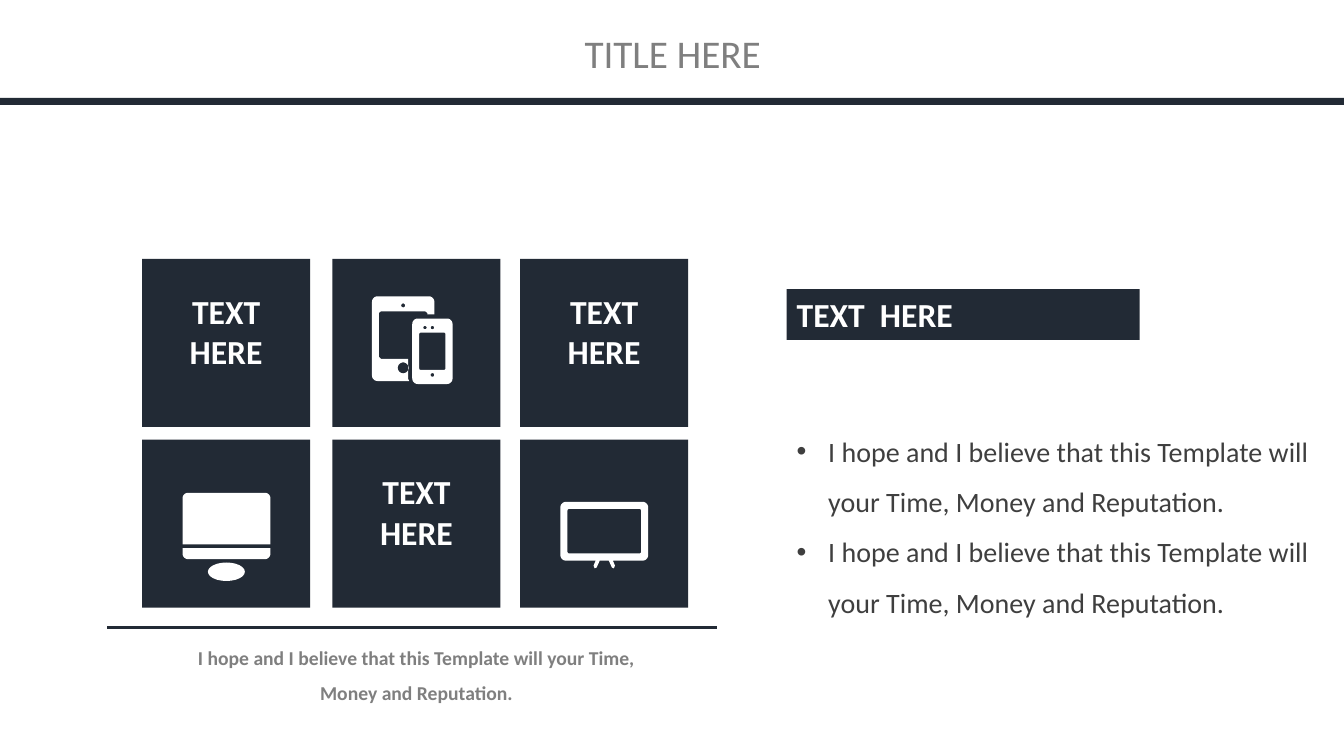
import math

from lxml import etree
from pptx import Presentation
from pptx.dml.color import RGBColor
from pptx.enum.shapes import MSO_CONNECTOR, MSO_SHAPE
from pptx.enum.text import MSO_ANCHOR, PP_ALIGN
from pptx.oxml.ns import qn
from pptx.util import Pt

RECTANGLE, OVAL = MSO_SHAPE.RECTANGLE, MSO_SHAPE.OVAL
STRAIGHT = MSO_CONNECTOR.STRAIGHT
TOP, MIDDLE = MSO_ANCHOR.TOP, MSO_ANCHOR.MIDDLE
LEFT, CENTER = PP_ALIGN.LEFT, PP_ALIGN.CENTER

NAVY = RGBColor(0x22, 0x2A, 0x35)
GRAY = RGBColor(0x7F, 0x7F, 0x7F)
DARK_GRAY = RGBColor(0x3F, 0x3F, 0x3F)
WHITE = RGBColor(0xFF, 0xFF, 0xFF)
FONT = "Calibri"
SENTENCE = "I hope and I believe that this Template will your Time, Money and Reputation."
ARC_POINTS = 7

presentation = Presentation()
presentation.slide_width = Pt(960)
presentation.slide_height = Pt(540)
slide = presentation.slides.add_slide(presentation.slide_layouts[5])
shapes = slide.shapes


def rounded_box(left, top, right, bottom, top_radius, bottom_radius):
    """Outline points by corner: top right, top left, bottom left, bottom right."""
    corners = (
        (right - top_radius, top + top_radius, top_radius),
        (left + top_radius, top + top_radius, top_radius),
        (left + bottom_radius, bottom - bottom_radius, bottom_radius),
        (right - bottom_radius, bottom - bottom_radius, bottom_radius),
    )
    points = []
    for quarter, (x, y, radius) in enumerate(corners):
        for step in range(ARC_POINTS):
            angle = (quarter + step / (ARC_POINTS - 1)) * math.pi / 2
            points.append((x + radius * math.cos(angle), y - radius * math.sin(angle)))
    return points


def style_shape(shape, color):
    shape.shadow.inherit = False
    shape.fill.solid()
    shape.fill.fore_color.rgb = color
    shape.line.fill.background()


# Header
header_bar = shapes.add_shape(RECTANGLE, Pt(0), Pt(70), Pt(960), Pt(5))
style_shape(header_bar, NAVY)

title = shapes.title
title.left, title.top, title.width, title.height = Pt(349), Pt(21), Pt(263), Pt(34)
frame = title.text_frame
frame.margin_left = frame.margin_right = frame.margin_top = frame.margin_bottom = 0
frame.vertical_anchor = TOP
frame.text = "TITLE HERE"
paragraph = frame.paragraphs[0]
paragraph.alignment = CENTER
paragraph.font.name, paragraph.font.size = FONT, Pt(28)
paragraph.font.color.rgb = GRAY

# Right side: heading and bullets
heading = shapes.add_shape(RECTANGLE, Pt(562), Pt(206.5), Pt(252), Pt(36.3))
style_shape(heading, NAVY)
frame = heading.text_frame
frame.vertical_anchor = MIDDLE
frame.text = "TEXT  HERE"
paragraph = frame.paragraphs[0]
paragraph.alignment = LEFT
paragraph.font.name, paragraph.font.size, paragraph.font.bold = FONT, Pt(24), True
paragraph.font.color.rgb = WHITE

bullets = shapes.add_textbox(Pt(562), Pt(294.5), Pt(398), Pt(152.5))
frame = bullets.text_frame
frame.word_wrap = True
frame.text = "\n".join([SENTENCE] * 2)
for paragraph in frame.paragraphs:
    paragraph.line_spacing = 1.5
    properties = paragraph._p.get_or_add_pPr()
    properties.set("marL", str(Pt(22.5)))
    properties.set("indent", str(-Pt(22.5)))
    bullet_color = etree.SubElement(properties, qn("a:buClr"))
    etree.SubElement(bullet_color, qn("a:srgbClr"), val=str(DARK_GRAY))
    etree.SubElement(properties, qn("a:buFont"), typeface="Arial")
    etree.SubElement(properties, qn("a:buChar"), char="•")
    paragraph.font.name, paragraph.font.size = FONT, Pt(20)
    paragraph.font.color.rgb = DARK_GRAY

# Left side: tiles
COLUMNS, ROWS, TILE = (101.5, 237.5, 371.5), (185, 314), 120
TEXT_TILES = {(0, 0), (0, 2), (1, 1)}
for row, top in enumerate(ROWS):
    for column, left in enumerate(COLUMNS):
        tile = shapes.add_shape(RECTANGLE, Pt(left), Pt(top), Pt(TILE), Pt(TILE))
        style_shape(tile, NAVY)
        if (row, column) not in TEXT_TILES:
            continue
        frame = tile.text_frame
        frame.vertical_anchor = TOP
        frame.margin_top = Pt(22.5)
        frame.text = "TEXT\nHERE"
        for paragraph in frame.paragraphs:
            paragraph.alignment = CENTER
            paragraph.font.name, paragraph.font.size, paragraph.font.bold = FONT, Pt(24), True
            paragraph.font.color.rgb = WHITE

# Icons: each is a list of outlines, inner outlines being holes
tablet_notch = [
    (292.3, 272.2), (291.6, 270.7), (291.6, 256.3), (272, 256.3), (270.7, 255),
    (270.7, 223.5), (272, 222.5), (303.8, 222.5), (305.3, 223.5), (305.3, 224.6),
    (310.3, 224.6),
]
tablet_body = rounded_box(265.7, 211.7, 310.3, 272.2, 4, 4)[:-ARC_POINTS] + tablet_notch
tablet_holes = [(288, 262.8, 3.9), (288, 218.2, 1.4)]
phone_holes = [(303.6, 234, 1.2), (308.9, 234, 1.2), (308.9, 267.8, 1.3)]
tablet, phone = (
    [body] + [rounded_box(x - r, y - r, x + r, y + r, r, r) for x, y, r in holes]
    for body, holes in (
        (tablet_body, tablet_holes),
        (rounded_box(294.5, 227.5, 323.3, 274.3, 4, 4), phone_holes),
    )
)
phone.append(rounded_box(299.5, 237.6, 318.2, 264.2, 1, 1))

left_leg = [(425.5, 400.5), (428.4, 400.5), (426.2, 405.4), (424.8, 406), (424, 404)]
television = [
    rounded_box(400.3, 358.5, 463, 400.5, 4, 4),
    rounded_box(405.4, 363.6, 457.9, 395.3, 1, 1),
    left_leg,
    [(863.3 - x, y) for x, y in left_leg],
]
monitor_screen = [rounded_box(130.4, 352, 193.2, 388.8, 4, 0)]
monitor_base = [rounded_box(130.4, 391.6, 193.2, 399.4, 0, 4)]

for icon in (tablet, phone, television, monitor_screen, monitor_base):
    builder = None
    for outline in icon:
        points = [(Pt(x), Pt(y)) for x, y in outline]
        if builder is None:
            builder = shapes.build_freeform(*points[0])
        else:
            builder.move_to(*points[0])
        builder.add_line_segments(points[1:], close=True)
    style_shape(builder.convert_to_shape(), WHITE)

monitor_stand = shapes.add_shape(OVAL, Pt(148.5), Pt(401.8), Pt(26.4), Pt(13.2))
style_shape(monitor_stand, WHITE)

# Caption under the tiles
rule = shapes.add_connector(STRAIGHT, Pt(76.5), Pt(448.5), Pt(512), Pt(448.5))
rule.line.color.rgb = NAVY
rule.line.width = Pt(2.25)
etree.SubElement(rule._element.spPr, qn("a:effectLst"))

caption = shapes.add_textbox(Pt(120), Pt(449.5), Pt(355), Pt(58))
frame = caption.text_frame
frame.word_wrap = True
frame.text = SENTENCE
paragraph = frame.paragraphs[0]
paragraph.alignment = CENTER
paragraph.line_spacing = 1.5
paragraph.font.name, paragraph.font.size, paragraph.font.bold = FONT, Pt(14), True
paragraph.font.color.rgb = GRAY

presentation.save("out.pptx")
